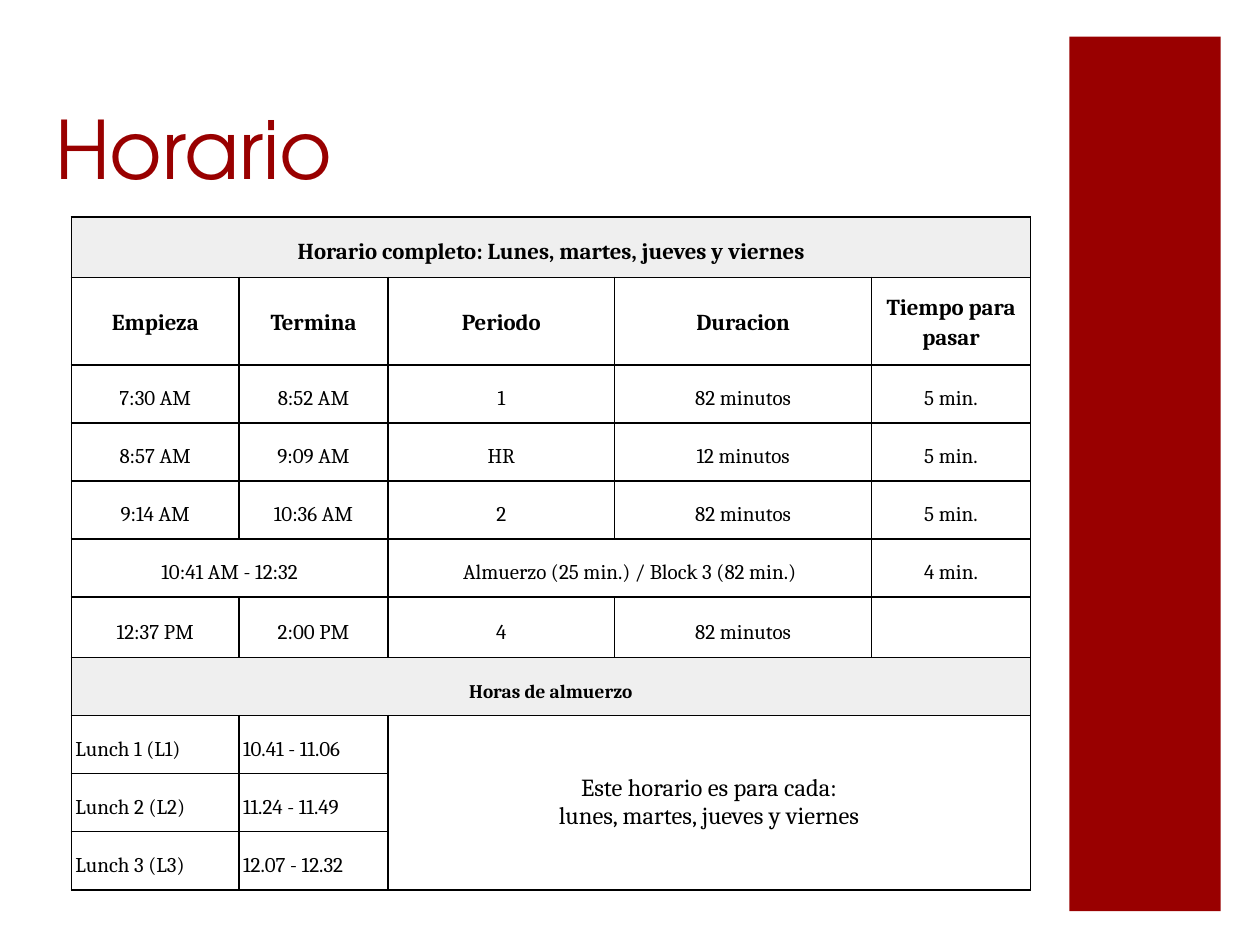
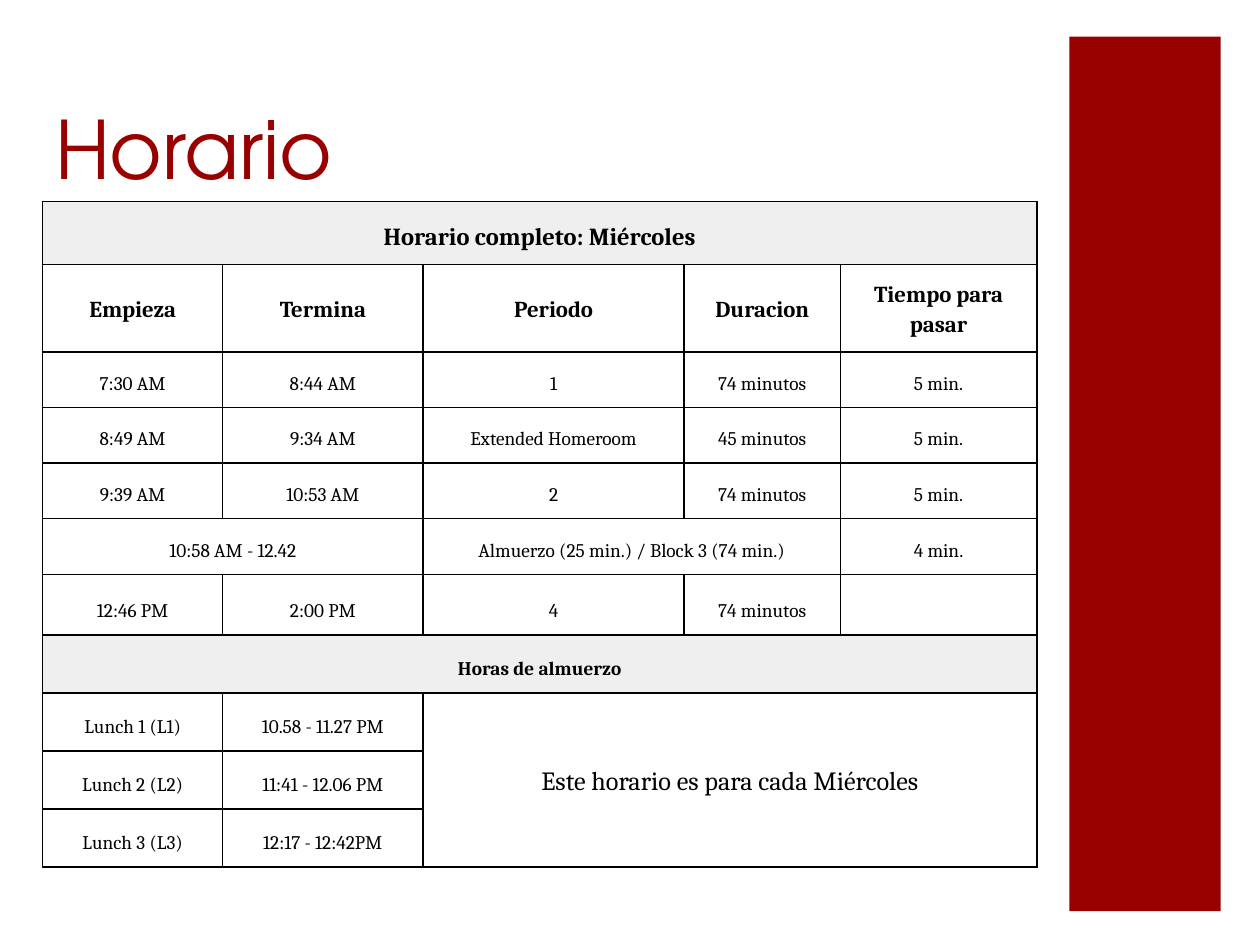
from lxml import etree
from pptx import Presentation
from pptx import util as u
from pptx.dml.color import RGBColor
from pptx.enum import shapes, text
from pptx.oxml import ns

RED = RGBColor(0x99, 0x00, 0x00)
BLACK = RGBColor(0x00, 0x00, 0x00)
WHITE = RGBColor(0xFF, 0xFF, 0xFF)
GREY = RGBColor(0xEF, 0xEF, 0xEF)
TITLE_FONT, TABLE_FONT = "TeX Gyre Adventor", "Cambria"
CENTER, LEFT = text.PP_ALIGN.CENTER, text.PP_ALIGN.LEFT
MIDDLE, BOTTOM = text.MSO_ANCHOR.MIDDLE, text.MSO_ANCHOR.BOTTOM

HEADS = ["Empieza", "Termina", "Periodo", "Duracion", "Tiempo para pasar"]
LUNCH_TITLE = "Horas de almuerzo"
LUNCH_ROW = 7

FULL_DAYS = dict(
    heading="Horario completo: Lunes, martes, jueves y viernes",
    periods=[
        ["7:30 AM", "8:52 AM", "1", "82 minutos", "5 min."],
        ["8:57 AM", "9:09 AM", "HR", "12 minutos", "5 min."],
        ["9:14 AM", "10:36 AM", "2", "82 minutos", "5 min."],
        ["10:41 AM - 12:32", None, "Almuerzo (25 min.) / Block 3 (82 min.)", None, "4 min."],
        ["12:37 PM", "2:00 PM", "4", "82 minutos", ""],
    ],
    lunches=["10.41 - 11.06", "11.24 - 11.49", "12.07 - 12.32"],
    note="Este horario es para cada:\nlunes, martes, jueves y viernes",
    left=1.44, top=4.37,
    widths=[3.38, 3, 4.57, 5.18, 3.2],
    heights=[1.22, 1.71] + [1.17] * 4 + [1.22] + [1.17] * 4,
    heading_size=13, body_size=12, note_size=14,
    lunch_align=LEFT, note_spacing=1.0,
)
WEDNESDAY = dict(
    heading="Horario completo: Miércoles",
    periods=[
        ["7:30 AM", "8:44 AM", "1", "74 minutos", "5 min."],
        ["8:49 AM", "9:34 AM", "Extended Homeroom", "45 minutos", "5 min."],
        ["9:39 AM", "10:53 AM", "2", "74 minutos", "5 min."],
        ["10:58 AM - 12.42", None, "Almuerzo (25 min.) / Block 3 (74 min.)", None, "4 min."],
        ["12:46 PM", "2:00 PM", "4", "74 minutos", ""],
    ],
    lunches=["10.58 - 11.27 PM", "11:41 - 12.06 PM", "12:17 - 12:42PM"],
    note="Este horario es para cada Miércoles",
    left=0.86, top=4.06,
    widths=[3.63, 4.04, 5.26, 3.15, 3.96],
    heights=[1.27, 1.71] + [1.12] * 4 + [1.22] + [1.17] * 4,
    heading_size=14, body_size=11, note_size=15,
    lunch_align=CENTER, note_spacing=1.15,
)


class Deck:
    """Holds the presentation style and the slide being built."""

    def __init__(self):
        self.prs = Presentation()
        self.prs.slide_width, self.prs.slide_height = u.Cm(25.4), u.Cm(19.05)

    def slide(self, title):
        self.s = self.prs.slides.add_slide(self.prs.slide_layouts[6])
        self.band()
        self.title(title)

    def band(self):
        box = map(u.Cm, (21.56, 0.74, 3.05, 17.63))
        sp = self.s.shapes.add_shape(shapes.MSO_SHAPE.RECTANGLE, *box)
        sp.shadow.inherit = False
        sp.fill.solid()
        sp.fill.fore_color.rgb = RED
        sp.line.fill.background()

    def title(self, words):
        box = map(u.Cm, (0.86, 0.89, 18.85, 3.18))
        tf = self.s.shapes.add_textbox(*box).text_frame
        tf.word_wrap = True
        tf.vertical_anchor = BOTTOM
        tf.text = words
        self.font(tf.paragraphs[0], TITLE_FONT, 46, RED)

    def font(self, p, name, size, color, bold=False):
        p.font.name, p.font.size, p.font.bold = name, u.Pt(size), bold
        p.font.color.rgb = color

    def borders(self, cell):
        tcPr = cell._tc.get_or_add_tcPr()
        for side in ("a:lnL", "a:lnR", "a:lnT", "a:lnB"):
            ln = etree.SubElement(tcPr, ns.qn(side), w=str(u.Pt(1)))
            fill = etree.SubElement(ln, ns.qn("a:solidFill"))
            etree.SubElement(fill, ns.qn("a:srgbClr"), val=str(BLACK))

    def cell(self, cell, words, size, bold=False, fill=WHITE, align=CENTER,
             anchor=BOTTOM, spacing=1.15):
        cell.fill.solid()
        cell.fill.fore_color.rgb = fill
        cell.vertical_anchor = anchor
        cell.text = words
        for p in cell.text_frame.paragraphs:
            p.alignment, p.line_spacing = align, spacing
            self.font(p, TABLE_FONT, size, BLACK, bold)

    def grid(self, left, top, widths, heights):
        box = map(u.Cm, (left, top, sum(widths), sum(heights)))
        table = self.s.shapes.add_table(len(heights), len(widths), *box).table
        table.first_row = table.horz_banding = False
        for column, width in zip(table.columns, widths):
            column.width = u.Cm(width)
        for row, height in zip(table.rows, heights):
            row.height = u.Cm(height)
        for cell in table.iter_cells():
            cell.margin_left = cell.margin_right = u.Cm(0.08)
            cell.margin_top = cell.margin_bottom = u.Cm(0.25)
            self.borders(cell)
        return table

    def schedule(self, heading, periods, lunches, note, left, top, widths, heights,
                 heading_size, body_size, note_size, lunch_align, note_spacing):
        table = self.grid(left, top, widths, heights)
        for row, words, size in ((0, heading, heading_size), (LUNCH_ROW, LUNCH_TITLE, 11)):
            table.cell(row, 0).merge(table.cell(row, 4))
            self.cell(table.cell(row, 0), words, size, bold=True, fill=GREY)
        for col, words in enumerate(HEADS):
            self.cell(table.cell(1, col), words, 13, bold=True, anchor=MIDDLE)
        for row, period in enumerate(periods, 2):
            for col, words in enumerate(period):
                if words is None:
                    table.cell(row, col - 1).merge(table.cell(row, col))
                else:
                    self.cell(table.cell(row, col), words, body_size)
        for number, hours in enumerate(lunches, 1):
            for col, words in enumerate((f"Lunch {number} (L{number})", hours)):
                self.cell(table.cell(LUNCH_ROW + number, col), words, body_size,
                          align=lunch_align)
        corner = table.cell(LUNCH_ROW + 1, 2)
        corner.merge(table.cell(LUNCH_ROW + 3, 4))
        self.cell(corner, note, note_size, anchor=MIDDLE, spacing=note_spacing)


def main():
    deck = Deck()
    for day in (FULL_DAYS, WEDNESDAY):
        deck.slide("Horario")
        deck.schedule(**day)
    deck.prs.save("out.pptx")


if __name__ == "__main__":
    main()
